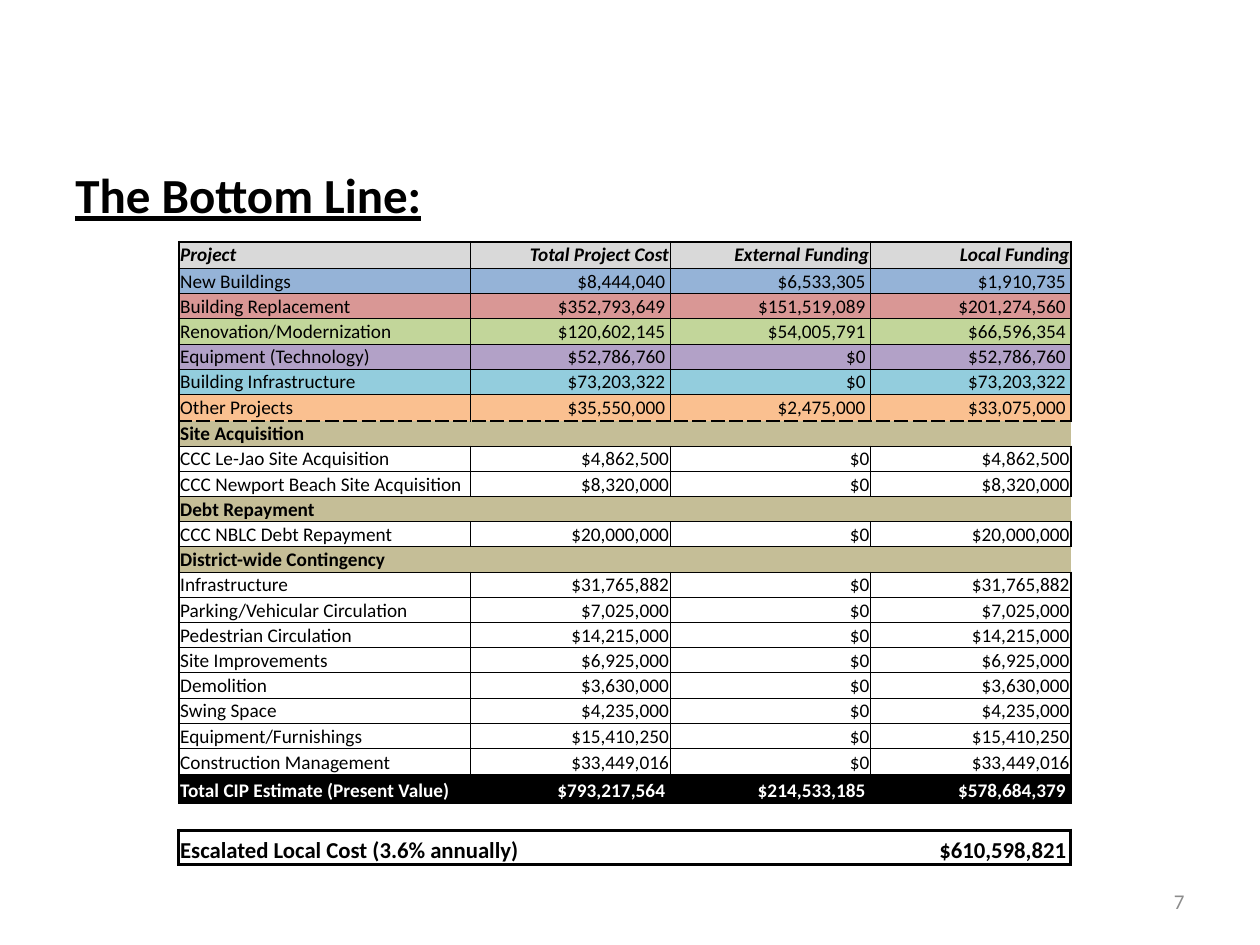
"""Build the slide that sums up the cost and funding of each project."""
from typing import NamedTuple

from lxml import etree
from pptx import Presentation, util as u
from pptx.dml.color import RGBColor
from pptx.enum import text as t
from pptx.oxml.ns import qn

FONT = "Calibri"
BLACK = "000000"
TAN = "C5BE97"
WIDTHS = [2.31, 1.59, 1.59, 1.59]
RULES = {0: 1.5, 7: 1, 21: 1.5, 22: 1.5, 23: 2, 24: 2}
DASHED = 7
GAP, LAST = 22, 23


class Style(NamedTuple):
    size: float = 11
    color: str = BLACK
    bold: bool = False
    slant: bool = False
    under: bool = False


class Row(NamedTuple):
    cells: list[str]
    fill: str = ""
    style: Style = Style()
    span: int = 1
    high: float = 0.2
    pad: float = 0.01
    top: bool = False


class Label(NamedTuple):
    words: str
    box: tuple[float, float, float, float]
    style: Style
    align: t.PP_ALIGN


def group(name: str, cost: str, grant: str, local: str, fill: str, high: float = 0.2) -> Row:
    """Return a row for one group of projects."""
    return Row([name, cost, grant, local], fill, pad=0.04, top=True, high=high)


def section(name: str, top: bool = False) -> Row:
    """Return a heading row that spans the table."""
    return Row([name, "", "", ""], TAN, Style(bold=True), span=4, top=top)


def item(name: str, cost: str, high: float = 0.2) -> Row:
    """Return a row whose cost is all paid from local funds."""
    return Row([name, cost, "$0", cost], high=high)


ROWS = [
    Row(["Project", "Total Project Cost", "External Funding", "Local Funding"],
        "D9D9D9", Style(bold=True, slant=True), high=0.21, top=True),
    group("New Buildings", "$8,444,040", "$6,533,305", "$1,910,735", "95B3D7"),
    group("Building Replacement", "$352,793,649", "$151,519,089", "$201,274,560", "D99795"),
    group("Renovation/Modernization", "$120,602,145", "$54,005,791", "$66,596,354", "C2D69A"),
    group("Equipment (Technology)", "$52,786,760", "$0", "$52,786,760", "B2A1C7"),
    group("Building Infrastructure", "$73,203,322", "$0", "$73,203,322", "93CDDD"),
    group("Other Projects", "$35,550,000", "$2,475,000", "$33,075,000", "FAC090", 0.21),
    section("Site Acquisition", top=True),
    item("CCC Le-Jao Site Acquisition", "$4,862,500"),
    item("CCC Newport Beach Site Acquisition", "$8,320,000"),
    section("Debt Repayment"),
    item("CCC NBLC Debt Repayment", "$20,000,000"),
    section("District-wide Contingency"),
    item("Infrastructure", "$31,765,882"),
    item("Parking/Vehicular Circulation", "$7,025,000"),
    item("Pedestrian Circulation", "$14,215,000"),
    item("Site Improvements", "$6,925,000"),
    item("Demolition", "$3,630,000"),
    item("Swing Space", "$4,235,000"),
    item("Equipment/Furnishings", "$15,410,250"),
    item("Construction Management", "$33,449,016", 0.21),
    Row(["Total CIP Estimate (Present Value)", "$793,217,564", "$214,533,185", "$578,684,379"],
        BLACK, Style(color="FFFFFF", bold=True), high=0.22, pad=0.04),
    Row([""] * 4, high=0.22),
    Row(["Escalated Local Cost (3.6% annually)", "", "", "$610,598,821"],
        style=Style(13, bold=True), span=2, high=0.27, pad=0.04),
]

LABELS = [
    Label("7", (7.17, 6.95, 2.33, 0.4), Style(12, "8C8C8C"), t.PP_ALIGN.RIGHT),
    Label("The Bottom Line:", (0.5, 1, 9, 1.08), Style(28, bold=True, under=True),
          t.PP_ALIGN.LEFT),
]


def rgb(code: str) -> RGBColor:
    """Turn a hex string into a colour."""
    return RGBColor.from_string(code)


def write(para, words: str, style: Style, align: t.PP_ALIGN) -> None:
    """Add one styled run to a paragraph."""
    para.alignment = align
    run = para.add_run()
    run.text = words
    font = run.font
    font.name, font.size = FONT, u.Pt(style.size)
    font.bold, font.italic, font.underline = style.bold, style.slant, style.under
    font.color.rgb = rgb(style.color)


def add_label(slide, label: Label) -> None:
    """Place a line of text in its own box."""
    frame = slide.shapes.add_textbox(*map(u.Inches, label.box)).text_frame
    frame.word_wrap = True
    frame.vertical_anchor = t.MSO_ANCHOR.MIDDLE
    write(frame.paragraphs[0], label.words, label.style, label.align)


def side_width(row: int, line: int) -> float:
    """Return the width of an upright rule, or 0 for none."""
    if row == GAP:
        return 0
    if line in (0, len(WIDTHS)):
        return 2 if row == LAST else 1.5
    return 0 if row == LAST or ROWS[row].span > 1 else 0.5


def add_rules(cell, row: int, col: int) -> None:
    """Draw the four borders of a cell."""
    sides = [
        ("a:lnL", side_width(row, col), False),
        ("a:lnR", side_width(row, col + 1), False),
        ("a:lnT", RULES.get(row, 0.5), row == DASHED),
        ("a:lnB", RULES.get(row + 1, 0.5), row + 1 == DASHED),
    ]
    props = cell._tc.get_or_add_tcPr()
    for place, (tag, width, dash) in enumerate(sides):
        line = etree.Element(qn(tag), w=str(u.Pt(width)))
        props.insert(place, line)
        if not width:
            etree.SubElement(line, qn("a:noFill"))
            continue
        fill = etree.SubElement(line, qn("a:solidFill"))
        etree.SubElement(fill, qn("a:srgbClr"), val=BLACK)
        etree.SubElement(line, qn("a:prstDash"), val="dash" if dash else "solid")


def fill_cell(cell, row: Row, col: int) -> None:
    """Set the margins, fill and words of a cell."""
    cell.margin_left = cell.margin_top = u.Inches(0.01)
    cell.margin_right = u.Inches(row.pad)
    cell.margin_bottom = 0
    cell.vertical_anchor = t.MSO_ANCHOR.TOP if row.top else t.MSO_ANCHOR.BOTTOM
    if row.fill:
        cell.fill.solid()
        cell.fill.fore_color.rgb = rgb(row.fill)
    else:
        cell.fill.background()
    para = cell.text_frame.paragraphs[0]
    if row.cells[col]:
        align = t.PP_ALIGN.RIGHT if col else t.PP_ALIGN.LEFT
        write(para, row.cells[col], row.style, align)
    else:
        etree.SubElement(para._p, qn("a:endParaRPr"), sz="1000")


def add_costs(slide) -> None:
    """Build the table of costs."""
    high = sum(row.high for row in ROWS)
    box = map(u.Inches, (1.42, 1.92, sum(WIDTHS), high))
    table = slide.shapes.add_table(len(ROWS), len(WIDTHS), *box).table
    table.first_row = table.horz_banding = False
    for col, width in enumerate(WIDTHS):
        table.columns[col].width = u.Inches(width)
    for num, row in enumerate(ROWS):
        table.rows[num].height = u.Inches(row.high)
        if row.span > 1:
            table.cell(num, 0).merge(table.cell(num, row.span - 1))
        for col in range(len(WIDTHS)):
            cell = table.cell(num, col)
            fill_cell(cell, row, col)
            add_rules(cell, num, col)


def main() -> None:
    """Make the deck and save it."""
    deck = Presentation()
    deck.slide_width, deck.slide_height = u.Inches(10), u.Inches(7.5)
    slide = deck.slides.add_slide(deck.slide_layouts[6])
    for label in LABELS:
        add_label(slide, label)
    add_costs(slide)
    deck.save("out.pptx")


if __name__ == "__main__":
    main()
